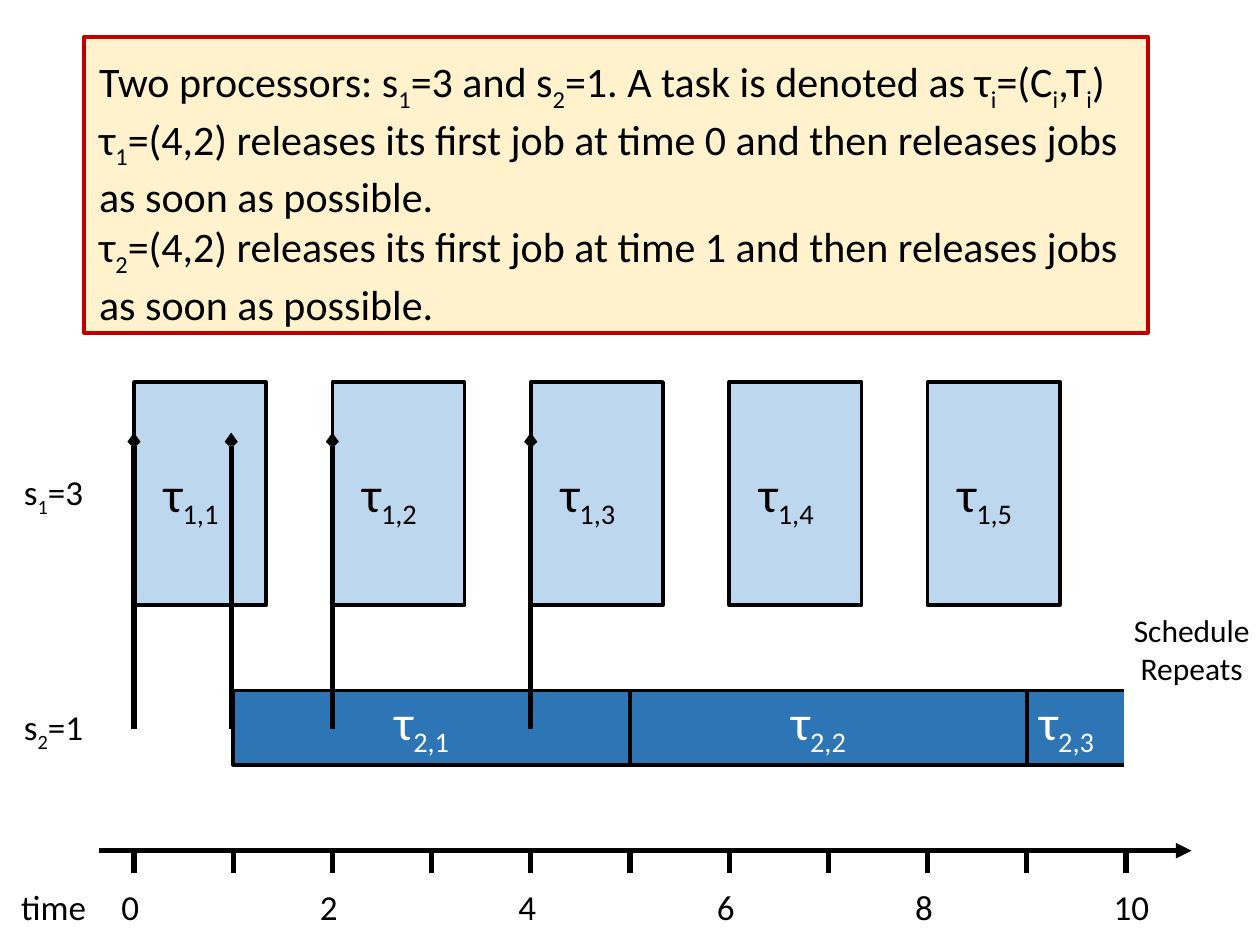
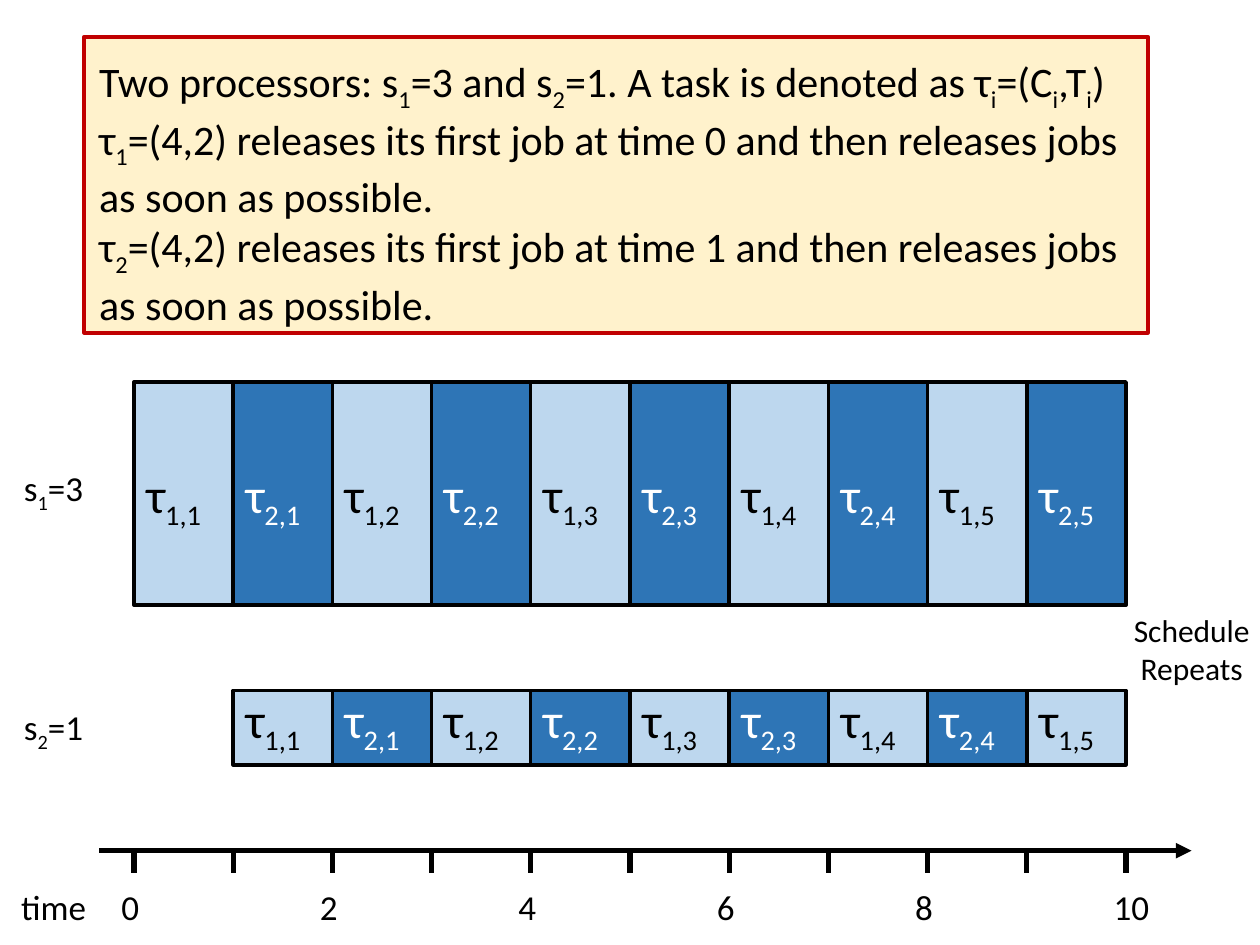
from dataclasses import dataclass

from lxml import etree
from pptx import Presentation
from pptx.dml.color import RGBColor
from pptx.enum.shapes import MSO_CONNECTOR, MSO_SHAPE
from pptx.enum.text import MSO_AUTO_SIZE, PP_ALIGN
from pptx.oxml.ns import qn
from pptx.util import Cm, Pt


@dataclass(frozen=True)
class Theme:
    font: str = "Calibri"
    ink: str = "000000"
    paper: str = "FFFFFF"
    first_task: str = "BDD7EE"
    second_task: str = "2E75B6"
    note_fill: str = "FFF2CC"
    note_line: str = "C00000"
    job_size: int = 28
    note_size: int = 24
    label_size: int = 20
    remark_size: int = 18
    job_line: float = 2
    note_line_width: float = 2.25
    axis_line: float = 3


THEME = Theme()

# Lengths in centimetres
ORIGIN = 2.7
TIME_UNIT = 2
END_TIME = 10
AXIS_TOP = 17.15
FAST_ROW = {"top": 7.7, "height": 4.5}
SLOW_ROW = {"top": 13.92, "height": 1.5}

NOTE = (
    "Two processors: s_1_=3 and s_2_=1. A task is denoted as τ_i_=(C_i_,T_i_)",
    "τ_1_=(4,2) releases its first job at time 0 and then releases jobs as soon as possible.",
    "τ_2_=(4,2) releases its first job at time 1 and then releases jobs as soon as possible.",
)


def time_x(time):
    return ORIGIN + TIME_UNIT * time


def set_all(target, values):
    for name, value in values.items():
        setattr(target, name, value)


def add_text(page, place, lines, size, color=THEME.ink, align=PP_ALIGN.LEFT):
    """Write one paragraph per line; text between underscores is subscript."""
    box = page.shapes.add_textbox(*map(Cm, place))
    frame = box.text_frame
    set_all(frame, {"word_wrap": True, "auto_size": MSO_AUTO_SIZE.SHAPE_TO_FIT_TEXT})
    for index, line in enumerate(lines):
        para = frame.paragraphs[0] if index == 0 else frame.add_paragraph()
        para.alignment = align
        for part, words in enumerate(line.split("_")):
            if not words:
                continue
            span = para.add_run()
            span.text = words
            set_all(span.font, {"name": THEME.font, "size": Pt(size)})
            span.font.color.rgb = RGBColor.from_string(color)
            if part % 2:
                span._r.get_or_add_rPr().set("baseline", "-25000")


def add_box(page, place, fill, line=THEME.ink, width=THEME.job_line):
    box = page.shapes.add_shape(MSO_SHAPE.RECTANGLE, *map(Cm, place))
    box.shadow.inherit = False
    box.fill.solid()
    box.fill.fore_color.rgb = RGBColor.from_string(fill)
    box.line.color.rgb = RGBColor.from_string(line)
    box.line.width = Pt(width)


def add_line(page, start, end, arrowhead=None):
    """Draw a straight line; arrowhead is (end tag, type, size)."""
    line = page.shapes.add_connector(MSO_CONNECTOR.STRAIGHT, *map(Cm, start + end))
    line.line.color.rgb = RGBColor.from_string(THEME.ink)
    line.line.width = Pt(THEME.axis_line)
    properties = line._element.spPr
    if arrowhead:
        tag, kind, size = arrowhead
        outline = properties.find(qn("a:ln"))
        etree.SubElement(outline, qn(tag), type=kind, w=size, len=size)
    etree.SubElement(properties, qn("a:effectLst"))


def add_job(page, row, task, start, duration):
    fill = THEME.first_task if task == 1 else THEME.second_task
    place = (time_x(start), row["top"], TIME_UNIT * duration, row["height"])
    add_box(page, place, fill)


def add_job_label(page, task, number, left, top):
    color = THEME.ink if task == 1 else THEME.paper
    add_text(page, (left, top, 2, 1.45), [f"τ_{task},{number}_"], THEME.job_size, color)


def add_note(page):
    add_box(page, (1.7, 0.74, 21.44, 5.97), THEME.note_fill,
            THEME.note_line, THEME.note_line_width)
    add_text(page, (1.75, 1, 21.92, 5.38), NOTE, THEME.note_size)


def add_time_axis(page):
    add_line(page, (2, AXIS_TOP), (24.02, AXIS_TOP), ("a:tailEnd", "triangle", "med"))
    for time in range(END_TIME + 1):
        add_line(page, (time_x(time), AXIS_TOP), (time_x(time), AXIS_TOP + 0.45))
    for time in range(0, END_TIME + 1, 2):
        width = 1.4 if time == END_TIME else 1
        add_text(page, (time_x(time) - 0.5, 17.73, width, 1.12), [str(time)],
                 THEME.label_size)


def add_frame(page, fast_label_top):
    """Add everything around the schedule that both slides share."""
    add_note(page)
    add_time_axis(page)
    side_labels = (("s_1_=3", fast_label_top), ("s_2_=1", 14.1), ("time", 17.73))
    for label, top in side_labels:
        add_text(page, (0.08, top, 2, 1.12), [label], THEME.label_size,
                 align=PP_ALIGN.CENTER)
    add_text(page, (21.97, 12.2, 4.11, 1.8), ["Schedule", "Repeats"],
             THEME.remark_size, align=PP_ALIGN.CENTER)


def add_dedicated_schedule(page):
    """Each task keeps its own processor."""
    for number in range(1, 6):
        start = 2 * (number - 1)
        add_job(page, FAST_ROW, 1, start, 4 / 3)
        add_job_label(page, 1, number, time_x(start) + 0.35, 9.22)

    slow_jobs = ((1, 4, 3), (5, 4, 3), (9, 1.05, 0))
    for number, (start, duration, indent) in enumerate(slow_jobs, 1):
        add_job(page, SLOW_ROW, 2, start, duration)
        add_job_label(page, 2, number, time_x(start) + indent, 13.82)
    # Leaves the last job open at the right
    add_box(page, (time_x(END_TIME), 13.9, 0.15, 1.55), THEME.paper, THEME.paper)

    for release in (0, 0.98, 2, 4):
        add_line(page, (time_x(release), 8.72), (time_x(release), 14.7),
                 ("a:headEnd", "arrow", "sm"))


def add_alternating_row(page, row, first_start, label_top):
    for step in range(END_TIME - first_start):
        number, task = step // 2 + 1, step % 2 + 1
        start = first_start + step
        add_job(page, row, task, start, 1)
        add_job_label(page, task, number, time_x(start), label_top)


def main():
    deck = Presentation()
    set_all(deck, {"slide_width": Cm(25.4), "slide_height": Cm(19.05)})
    blank = deck.slide_layouts[6]

    page = deck.slides.add_slide(blank)
    add_frame(page, 9.37)
    add_dedicated_schedule(page)

    page = deck.slides.add_slide(blank)
    add_frame(page, 9.28)
    add_alternating_row(page, FAST_ROW, 0, 9.24)
    add_alternating_row(page, SLOW_ROW, 1, 13.77)

    deck.save("out.pptx")


if __name__ == "__main__":
    main()
